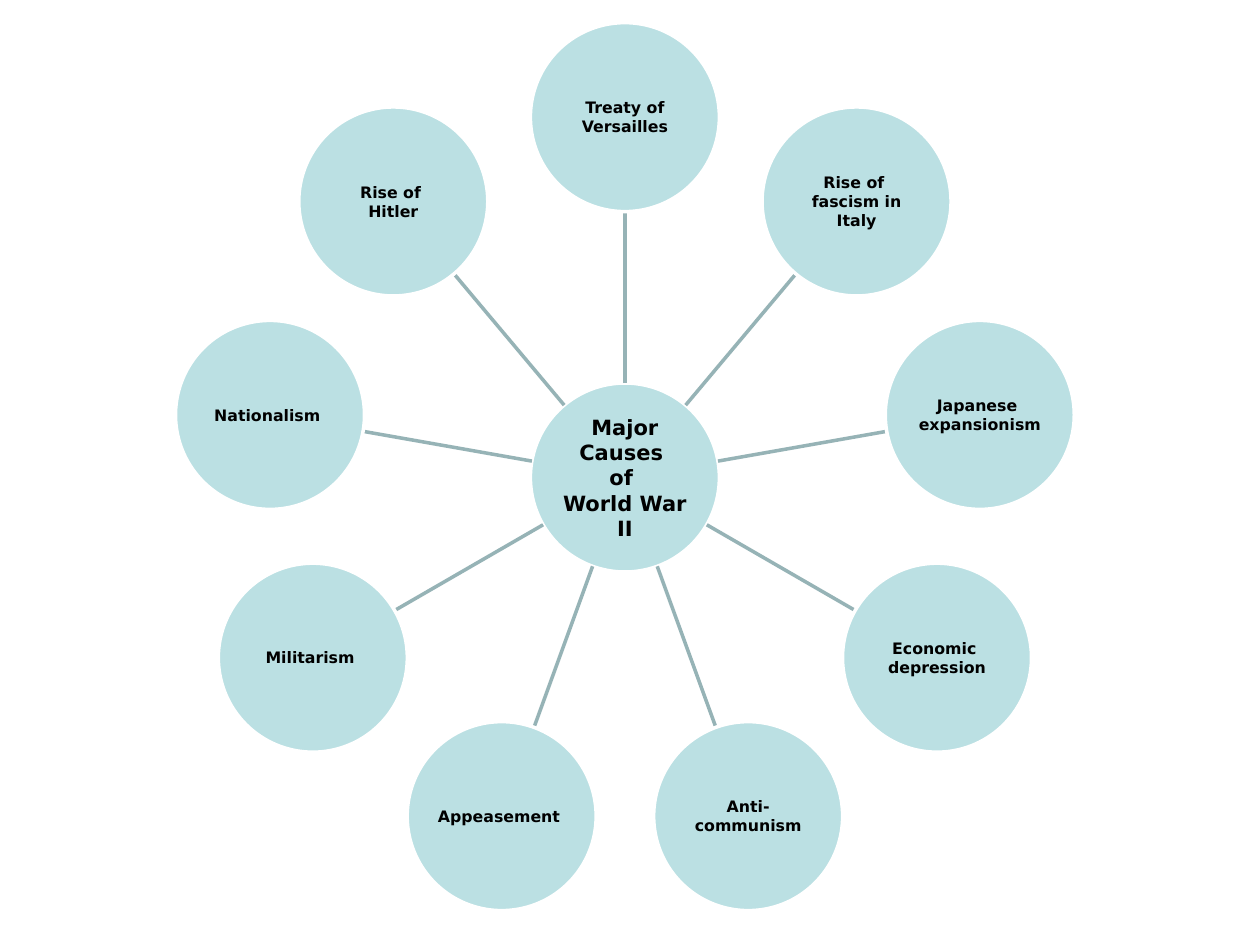
from math import cos, radians, sin

from lxml.etree import SubElement
from pptx import Presentation
from pptx.dml.color import RGBColor
from pptx.enum.shapes import MSO_CONNECTOR as Connector, MSO_SHAPE as Shape
from pptx.enum.text import MSO_ANCHOR as Anchor, PP_ALIGN as Align
from pptx.oxml.ns import qn
from pptx.util import Inches, Pt

COLORS = {"circle": "BBE0E3", "outline": "FFFFFF", "spoke": "96B3B6", "text": "000000"}
COLUMNS, ROWS = 100, 75
CENTER = (49.6, 37.9)
ORBIT, DIAMETER, SPOKE = 28.6, 15, (7.5, 21.1)
TOPIC = ["Major Causes ", "of ", "World War II"]
CAUSES = [
    ["Treaty of", "Versailles"],
    ["Rise of ", "fascism in", "Italy"],
    ["Japanese ", "expansionism"],
    ["Economic ", "depression"],
    ["Anti-", "communism"],
    ["Appeasement "],
    ["Militarism "],
    ["Nationalism "],
    ["Rise of ", "Hitler"],
]


def polar(angle, radius):
    return (CENTER[0] + radius * sin(radians(angle)),
            CENTER[1] - radius * cos(radians(angle)))


class RadialDiagram:
    """Draws circles and spokes on one slide, measured in grid columns and rows."""

    font_format = {"name": "DejaVu Sans", "bold": True}
    frame_format = {
        "word_wrap": True,
        "vertical_anchor": Anchor.MIDDLE,
        **{f"margin_{side}": Inches(0.01) for side in ("left", "top", "right", "bottom")},
    }

    def __init__(self, presentation):
        self.cell_width = presentation.slide_width / COLUMNS
        self.cell_height = presentation.slide_height / ROWS
        self.slide = presentation.slides.add_slide(presentation.slide_layouts[6])

    def place(self, column, row):
        return round(column * self.cell_width), round(row * self.cell_height)

    def apply(self, target, values):
        for name, value in values.items():
            setattr(target, name, value)

    def stroke(self, line, color):
        line.color.rgb = RGBColor.from_string(COLORS[color])
        line.width = Pt(2)

    def spoke(self, angle):
        start, end = (self.place(*polar(angle, radius)) for radius in SPOKE)
        connector = self.slide.shapes.add_connector(Connector.STRAIGHT, *start, *end)
        self.stroke(connector.line, "spoke")
        SubElement(connector._element.spPr, qn("a:effectLst"))

    def circle(self, center, lines, size):
        corner = self.place(*(value - DIAMETER / 2 for value in center))
        shape = self.slide.shapes.add_shape(
            Shape.OVAL, *corner, *self.place(DIAMETER, DIAMETER))
        shape.shadow.inherit = False
        shape.fill.solid()
        shape.fill.fore_color.rgb = RGBColor.from_string(COLORS["circle"])
        self.stroke(shape.line, "outline")
        self.apply(shape.text_frame, self.frame_format)
        shape.text_frame.text = "\n".join(lines)
        for paragraph in shape.text_frame.paragraphs:
            paragraph.alignment = Align.CENTER
            self.apply(paragraph.font, {**self.font_format, "size": Pt(size)})
            paragraph.font.color.rgb = RGBColor.from_string(COLORS["text"])


def main():
    presentation = Presentation()
    presentation.slide_width, presentation.slide_height = Inches(10), Inches(7.5)
    diagram = RadialDiagram(presentation)
    diagram.circle(CENTER, TOPIC, 12)
    for index, cause in enumerate(CAUSES):
        angle = index * 360 / len(CAUSES)
        diagram.spoke(angle)
        diagram.circle(polar(angle, ORBIT), cause, 9)
    presentation.save("out.pptx")


if __name__ == "__main__":
    main()
